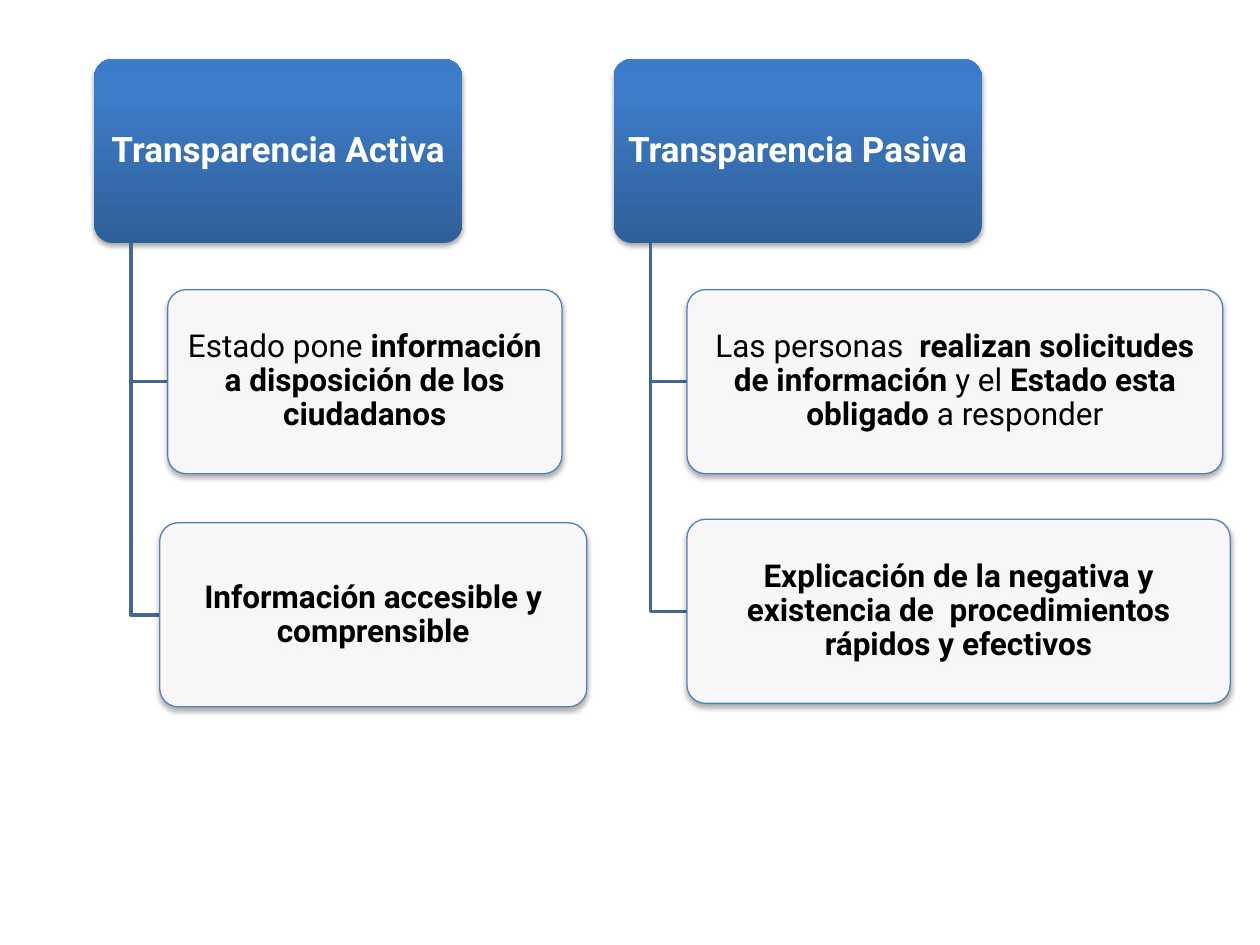
from copy import deepcopy
from dataclasses import dataclass

from lxml.etree import SubElement
from pptx import Presentation
from pptx.dml.color import RGBColor
from pptx.enum.shapes import MSO_SHAPE as Preset
from pptx.enum.text import MSO_ANCHOR as Anchor, PP_ALIGN as Align
from pptx.oxml.ns import qn
from pptx.util import Cm, Pt

COLORS = {
    "header_bottom": "2F5F99",
    "header_middle": "3D7CC7",
    "header_top": "3A7CCB",
    "branch": "3F6797",
    "card": "FFFFFF",
    "card_border": "4F81BD",
    "header_text": "FFFFFF",
    "card_text": "000000",
    "shadow": "000000",
}
FONT = "Roboto"

# Lengths in centimetres
BOX_HEIGHT = 3.71
HEADER_TOP = 1.19
HEADER_WIDTH = 7.42
TRUNK_OFFSET = HEADER_WIDTH / 10


@dataclass
class Span:
    text: str
    bold: bool = True


@dataclass
class Card:
    left: float
    top: float
    width: float
    spans: list[Span]


@dataclass
class Column:
    left: float
    title: str
    cards: list[Card]


COLUMNS = [
    Column(1.9, "Transparencia Activa", [
        Card(3.38, 5.84, 7.95, [
            Span("Estado pone ", False),
            Span("información a disposición de los ciudadanos"),
        ]),
        Card(3.22, 10.54, 8.61, [Span("Información accesible y comprensible")]),
    ]),
    Column(12.37, "Transparencia Pasiva", [
        Card(13.85, 5.84, 10.8, [
            Span("Las personas  ", False),
            Span("realizan solicitudes de información"),
            Span(" y el ", False),
            Span("Estado esta obligado "),
            Span("a responder", False),
        ]),
        Card(13.85, 10.47, 10.95, [
            Span("Explicación de la negativa y existencia de  "
                 "procedimientos rápidos y efectivos"),
        ]),
    ]),
]


def rgb(name: str) -> RGBColor:
    return RGBColor.from_string(COLORS[name])


def add_shadow(box) -> None:
    box.shadow.inherit = False
    effects = box._element.spPr.find(qn("a:effectLst"))
    outer = SubElement(effects, qn("a:outerShdw"), blurRad=str(Pt(3.1)),
                       dist=str(Pt(1.8)), dir="5400000", rotWithShape="0")
    color = SubElement(outer, qn("a:srgbClr"), val=COLORS["shadow"])
    SubElement(color, qn("a:alpha"), val="35000")


def add_box(page, left: float, top: float, width: float,
            spans: list[Span], size: int, text_color: str):
    """Draw a rounded box with one centred paragraph."""
    box = page.shapes.add_shape(Preset.ROUNDED_RECTANGLE, Cm(left), Cm(top),
                                Cm(width), Cm(BOX_HEIGHT))
    box.adjustments[0] = 0.1
    add_shadow(box)
    frame = box.text_frame
    frame.word_wrap = True
    frame.vertical_anchor = Anchor.MIDDLE
    frame.margin_left = frame.margin_right = Cm(0.1)
    frame.margin_top = frame.margin_bottom = Cm(0.07)
    para = frame.paragraphs[0]
    para.alignment = Align.CENTER
    para.line_spacing = 0.9
    for span in spans:
        run = para.add_run()
        run.text = span.text
        run.font.name = FONT
        run.font.size = Pt(size)
        run.font.bold = span.bold
        run.font.color.rgb = rgb(text_color)
    return box


def add_header(page, column: Column) -> None:
    box = add_box(page, column.left, HEADER_TOP, HEADER_WIDTH,
                  [Span(column.title)], 20, "header_text")
    box.line.fill.background()
    box.fill.gradient()
    box.fill.gradient_angle = 90
    # The default gradient has two stops; a third is needed
    stop_list = box._element.spPr.find(qn("a:gradFill")).find(qn("a:gsLst"))
    stop_list.append(deepcopy(stop_list[0]))
    stops = [(0, "header_bottom"), (0.8, "header_middle"), (1, "header_top")]
    for stop, (position, color) in zip(box.fill.gradient_stops, stops):
        stop.position = position
        stop.color.rgb = rgb(color)


def add_branch(page, trunk: float, card: Card) -> None:
    """Draw the elbow from the header down to the card's left side."""
    start = HEADER_TOP + BOX_HEIGHT
    middle = card.top + BOX_HEIGHT / 2
    builder = page.shapes.build_freeform(Cm(trunk), Cm(start))
    builder.add_line_segments([(Cm(trunk), Cm(middle)),
                               (Cm(card.left), Cm(middle))], close=False)
    branch = builder.convert_to_shape()
    branch.shadow.inherit = False
    branch.fill.background()
    branch.line.color.rgb = rgb("branch")
    branch.line.width = Pt(2)


def add_card(page, card: Card) -> None:
    box = add_box(page, card.left, card.top, card.width, card.spans,
                  18, "card_text")
    box.fill.solid()
    box.fill.fore_color.rgb = rgb("card")
    color = box._element.spPr.find(qn("a:solidFill")).find(qn("a:srgbClr"))
    SubElement(color, qn("a:alpha"), val="90000")
    box.line.color.rgb = rgb("card_border")
    box.line.width = Pt(0.75)


def main() -> None:
    deck = Presentation()
    deck.slide_width, deck.slide_height = Cm(25.4), Cm(19.05)
    page = deck.slides.add_slide(deck.slide_layouts[6])
    for column in COLUMNS:
        add_header(page, column)
        for card in column.cards:
            add_branch(page, column.left + TRUNK_OFFSET, card)
            add_card(page, card)
    deck.save("out.pptx")


if __name__ == "__main__":
    main()
